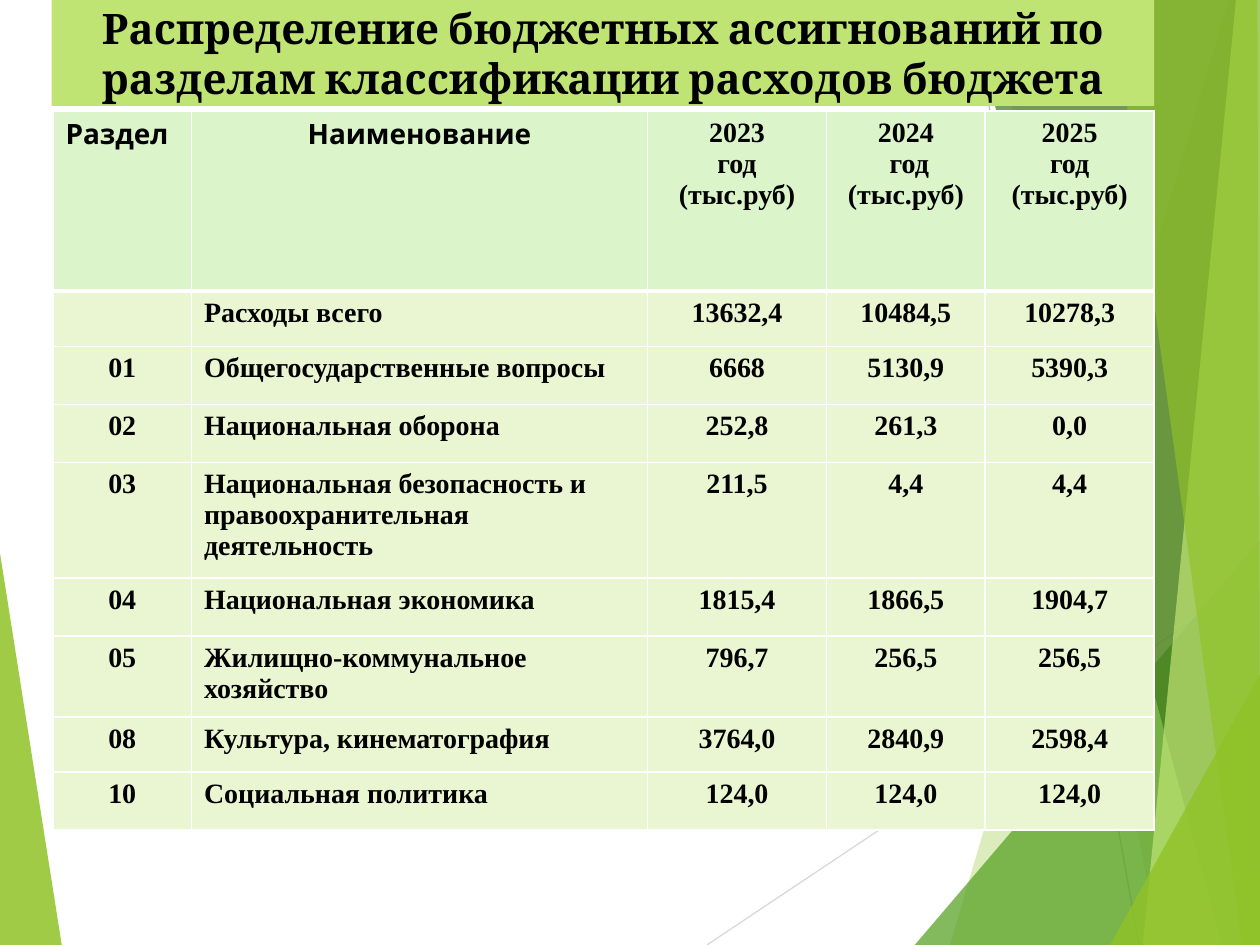
from dataclasses import dataclass

from lxml.etree import SubElement
from pptx import Presentation
from pptx.dml.color import RGBColor
from pptx.enum.shapes import MSO_CONNECTOR
from pptx.enum.text import MSO_ANCHOR, MSO_AUTO_SIZE, PP_ALIGN
from pptx.oxml.ns import qn
from pptx.util import Inches, Pt


@dataclass(frozen=True)
class Theme:
    """Colours, fonts and type sizes of the slide."""
    ink: str = "000000"
    white: str = "FFFFFF"
    lime: str = "C0E474"
    leaf: str = "90C226"
    grass: str = "54A021"
    moss: str = "3F7819"
    pale: str = "D9D9D9"
    gray: str = "BFBFBF"
    head: str = "DBF4CA"
    body: str = "EAF6D1"
    serif: str = "Times New Roman"
    label: str = "Cabin"
    display: str = "Cambria"
    large: int = 24
    small: int = 16


THEME = Theme()
RAYS = [
    (THEME.pale, (5.61, 7.5), (10, 4.57)),
    (THEME.gray, (7.7, 0), (9.04, 7.5)),
]
SHARDS = [
    (THEME.leaf, 30, [(9.75, 0), (7.54, 7.5), (10, 7.5), (10, 0)]),
    (THEME.leaf, 20, [(7.88, 0), (9.19, 7.5), (10, 7.5), (10, 0)]),
    (THEME.grass, 72, [(7.26, 7.5), (10, 4.29), (10, 7.5)]),
    (THEME.moss, 70, [(7.67, 0), (9.7, 7.5), (10, 7.5), (10, 0)]),
    (THEME.lime, 70, [(9.81, 0), (9.07, 7.5), (10, 7.5), (10, 0)]),
    (THEME.leaf, 65, [(8.83, 0), (9.86, 7.5), (10, 7.5), (9.98, 0)]),
    (THEME.leaf, 80, [(8.81, 7.5), (10, 5.35), (10, 7.5)]),
]
WEDGE = (THEME.leaf, 85, [(0, 4.39), (0.49, 7.5), (0, 7.5)])

TITLE = "Распределение бюджетных ассигнований по разделам классификации расходов бюджета"
WIDTHS = [1.1, 3.62, 1.42, 1.26, 1.34]
HEIGHTS = [1.43, 0.44, 0.46, 0.46, 0.92, 0.46, 0.64, 0.44, 0.46]
ROWS = [
    ("Раздел", "Наименование", "2023\nгод\n(тыс.руб)", "2024\n год\n(тыс.руб)", "2025\nгод\n(тыс.руб)"),
    ("", "Расходы всего", "13632,4", "10484,5", "10278,3"),
    ("01", "Общегосударственные вопросы", "6668", "5130,9", "5390,3"),
    ("02", "Национальная оборона", "252,8", "261,3", "0,0"),
    ("03", "Национальная безопасность и правоохранительная деятельность", "211,5", "4,4", "4,4"),
    ("04", "Национальная экономика", "1815,4", "1866,5", "1904,7"),
    ("05", "Жилищно-коммунальное хозяйство", "796,7", "256,5", "256,5"),
    ("08", "Культура, кинематография", "3764,0", "2840,9", "2598,4"),
    ("10", "Социальная политика", "124,0", "124,0", "124,0"),
]


def paint(fill, color):
    """Set a solid fill."""
    fill.solid()
    fill.fore_color.rgb = RGBColor.from_string(color)


def write(frame, text, face, size, align):
    """Fill a text frame with bold text, one paragraph per line."""
    for i, line in enumerate(text.split("\n")):
        para = frame.add_paragraph() if i else frame.paragraphs[0]
        para.alignment = align
        run = para.add_run()
        run.text = line
        run.font.name = face
        run.font.size = Pt(size)
        run.font.bold = True
        run.font.color.rgb = RGBColor.from_string(THEME.ink)


def add_ray(shapes, color, start, end):
    """Draw a thin straight line."""
    ray = shapes.add_connector(MSO_CONNECTOR.STRAIGHT, *map(Inches, start + end))
    ray.line.color.rgb = RGBColor.from_string(color)
    ray.line.width = Pt(0.75)
    SubElement(ray.element.spPr, qn("a:effectLst"))


def add_shard(shapes, color, alpha, points):
    """Draw a translucent polygon."""
    first, *rest = [(Inches(x), Inches(y)) for x, y in points]
    pen = shapes.build_freeform(*first)
    pen.add_line_segments(rest, close=True)
    shard = pen.convert_to_shape()
    shard.shadow.inherit = False
    shard.line.fill.background()
    paint(shard.fill, color)
    tone = shard.element.spPr.find(".//" + qn("a:srgbClr"))
    SubElement(tone, qn("a:alpha"), val=str(alpha * 1000))


def add_decor(slide):
    """Draw the wedge, rays and shards as one group."""
    shapes = slide.shapes.add_group_shape().shapes
    add_shard(shapes, *WEDGE)
    for ray in RAYS:
        add_ray(shapes, *ray)
    for shard in SHARDS:
        add_shard(shapes, *shard)


def add_edges(cell, row):
    """Give a cell white borders, thick beneath the header row."""
    props = cell._tc.get_or_add_tcPr()
    for side in "LRTB":
        thick = (row, side) in [(0, "B"), (1, "T")]
        edge = SubElement(props, qn(f"a:ln{side}"), w=str(Pt(3 if thick else 1)))
        fill = SubElement(edge, qn("a:solidFill"))
        SubElement(fill, qn("a:srgbClr"), val=THEME.white)


def add_budget(slide):
    """Build the budget table."""
    box = map(Inches, (0.42, 0.88, sum(WIDTHS), sum(HEIGHTS)))
    table = slide.shapes.add_table(len(ROWS), len(WIDTHS), *box).table
    for col, width in zip(table.columns, WIDTHS):
        col.width = Inches(width)
    for row, height in zip(table.rows, HEIGHTS):
        row.height = Inches(height)
    for r, row in enumerate(ROWS):
        for c, text in enumerate(row):
            cell = table.cell(r, c)
            add_edges(cell, r)
            paint(cell.fill, THEME.body if r else THEME.head)
            left = c == (1 if r else 0)
            face = THEME.label if r == 0 and c < 2 else THEME.serif
            if text:
                write(cell.text_frame, text, face, THEME.small,
                      PP_ALIGN.LEFT if left else PP_ALIGN.CENTER)


def add_title(slide):
    """Format the title as a band and bring it to the front."""
    title = slide.shapes.title
    title.left, title.top, title.width, title.height = map(Inches, (0.41, 0, 8.75, 0.84))
    paint(title.fill, THEME.lime)
    frame = title.text_frame
    frame.word_wrap = True
    frame.auto_size = MSO_AUTO_SIZE.NONE
    frame.vertical_anchor = MSO_ANCHOR.MIDDLE
    write(frame, TITLE, THEME.display, THEME.large, PP_ALIGN.CENTER)
    title.element.getparent().append(title.element)


def main():
    """Build and save the slide."""
    deck = Presentation()
    deck.slide_width, deck.slide_height = Inches(10), Inches(7.5)
    slide = deck.slides.add_slide(deck.slide_layouts[5])
    add_decor(slide)
    add_budget(slide)
    add_title(slide)
    deck.save("out.pptx")


if __name__ == "__main__":
    main()
